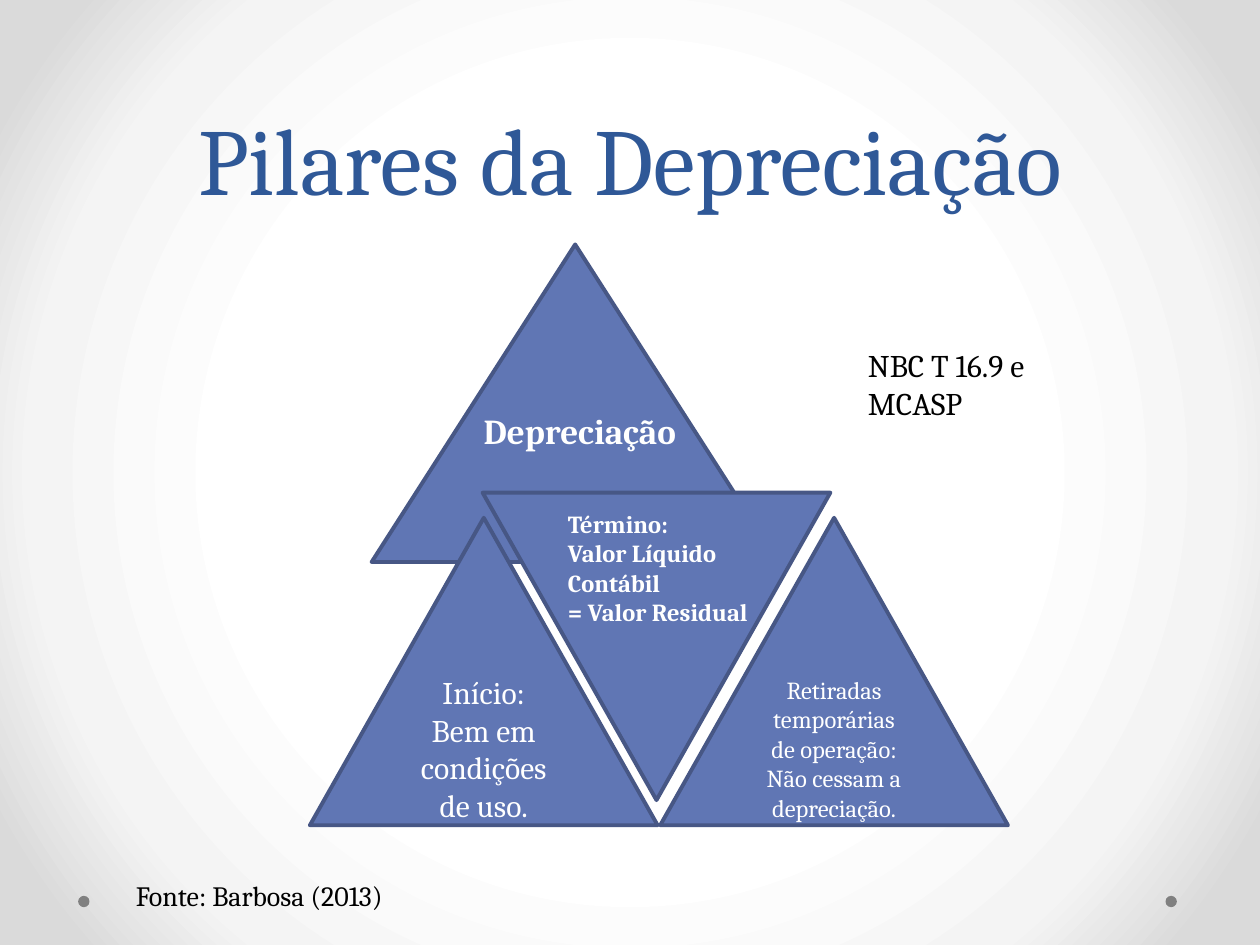
from pptx import Presentation
from pptx import oxml
from pptx.dml.color import RGBColor
from pptx.enum import shapes, text
from pptx.oxml import ns
from pptx.util import Inches, Pt

FONT = "Cambria"
TITLE_BLUE = RGBColor(0x2F, 0x58, 0x97)
FILL_BLUE = RGBColor(0x60, 0x76, 0xB4)
LINE_BLUE = RGBColor(0x47, 0x57, 0x85)
GRAY = RGBColor(0x80, 0x80, 0x80)
WHITE = RGBColor(0xFF, 0xFF, 0xFF)
BLACK = RGBColor(0, 0, 0)
BACKGROUND_STOPS = [(50, WHITE), (76, RGBColor(0xF4, 0xF4, 0xF4)), (92, RGBColor(0xDA, 0xDA, 0xDA))]


def write(shape, lines, size, color=WHITE, bold=False, align=text.PP_ALIGN.LEFT,
          anchor=text.MSO_ANCHOR.TOP, spacing=None):
    frame = shape.text_frame
    frame.word_wrap = True
    frame.auto_size = text.MSO_AUTO_SIZE.NONE
    frame.vertical_anchor = anchor
    frame.text = lines
    for paragraph in frame.paragraphs:
        paragraph.alignment = align
        paragraph.line_spacing = spacing
        font = paragraph.runs[0].font
        font.name, font.size, font.bold = FONT, Pt(size), bold
        font.color.rgb = color


def add_filled(kind, left, top, width, height, color):
    shape = slide.shapes.add_shape(kind, Inches(left), Inches(top), Inches(width), Inches(height))
    shape.shadow.inherit = False
    shape.fill.solid()
    shape.fill.fore_color.rgb = color
    shape.line.fill.background()
    return shape


presentation = Presentation()
presentation.slide_width, presentation.slide_height = Inches(10), Inches(7.5)
slide = presentation.slides.add_slide(presentation.slide_layouts[5])

# Radial background
slide.background.fill.gradient()
gradient = slide.element.find(".//" + ns.qn("a:gradFill"))
stops = "".join(f'<a:gs pos="{position * 1000}"><a:srgbClr val="{color}"/></a:gs>'
                for position, color in BACKGROUND_STOPS)
gradient.getparent().replace(gradient, oxml.parse_xml(
    f'<a:gradFill {ns.nsdecls("a")} rotWithShape="1"><a:gsLst>{stops}</a:gsLst>'
    '<a:path path="circle"><a:fillToRect l="50000" t="50000" r="50000" b="50000"/></a:path>'
    '</a:gradFill>'))

for left in (9.25, 0.62):
    add_filled(shapes.MSO_SHAPE.OVAL, left, 7.11, 0.09, 0.09, GRAY)

title = slide.shapes.title
title.left, title.top, title.width, title.height = Inches(0.5), Inches(0), Inches(9), Inches(1.75)
write(title, "Pilares da Depreciação", 54, color=TITLE_BLUE, align=text.PP_ALIGN.CENTER,
      anchor=text.MSO_ANCHOR.BOTTOM, spacing=Pt(58))

# Triangles: left, top, width, height, rotation, wording, text size
triangles = [
    (2.95, 1.94, 3.23, 2.52, 0, "", 0),
    (2.46, 4.11, 2.76, 2.44, 0, "Início:\nBem em condições de uso.", 18),
    (5.24, 4.11, 2.76, 2.44, 0, "Retiradas temporárias de operação: Não cessam a depreciação.", 14),
    (3.83, 3.91, 2.76, 2.44, 180, "", 0),
]
for left, top, width, height, rotation, wording, size in triangles:
    triangle = add_filled(shapes.MSO_SHAPE.ISOSCELES_TRIANGLE, left, top, width, height, FILL_BLUE)
    triangle.line.color.rgb = LINE_BLUE
    triangle.line.width = Pt(2.25)
    triangle.rotation = rotation
    if wording:
        write(triangle, wording, size, align=text.PP_ALIGN.CENTER, anchor=text.MSO_ANCHOR.MIDDLE)

# Labels: left, top, width, height, wording, text size, colour, bold
labels = [
    (3.74, 3.2, 3.86, 0.44, "Depreciação", 20, WHITE, True),
    (4.41, 3.99, 1.77, 1.04, "Término:\nValor Líquido Contábil\n= Valor Residual", 14, WHITE, True),
    (0.98, 6.92, 2.36, 0.37, "Fonte: Barbosa (2013)", 16, BLACK, False),
    (6.79, 2.7, 1.61, 0.71, "NBC T 16.9 e MCASP", 18, BLACK, False),
]
for left, top, width, height, wording, size, color, bold in labels:
    label = slide.shapes.add_textbox(Inches(left), Inches(top), Inches(width), Inches(height))
    write(label, wording, size, color=color, bold=bold)

presentation.save("out.pptx")
